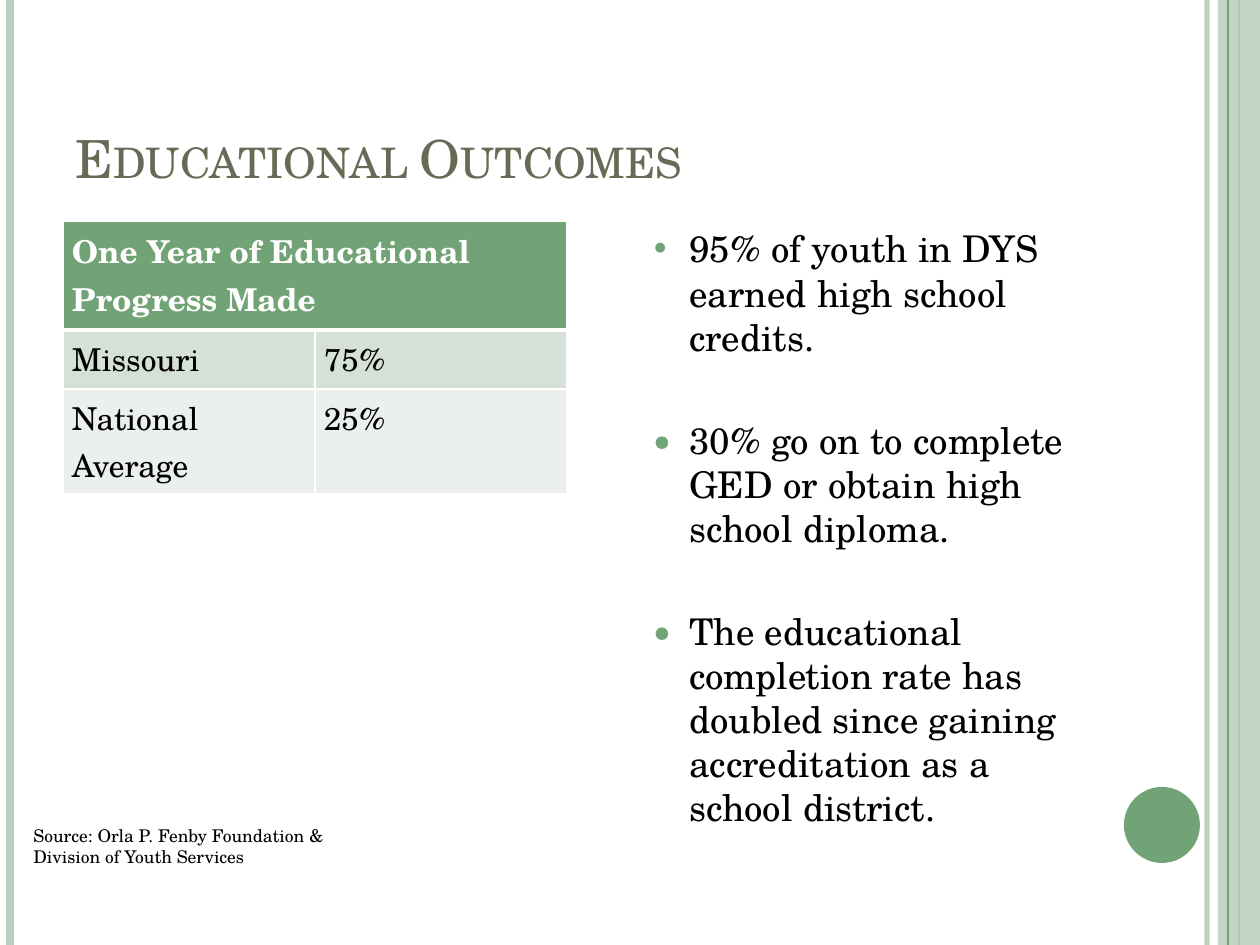
from dataclasses import dataclass

from lxml import etree
from pptx import Presentation
from pptx import util as u
from pptx.dml import color as c
from pptx.enum import shapes, text
from pptx.oxml import ns

PX = 914400 / 126
FONT = "TeX Gyre Schola"
GREEN, PALE, OLIVE = "72A376", "BCCEBD", "676A55"
WHITE, BLACK = "FFFFFF", "000000"


@dataclass
class Rule:
    x: int
    color: str
    width: float
    opacity: int = 100


@dataclass
class Panel:
    kind: int
    box: tuple
    color: str
    opacity: int = 100


@dataclass
class Cell:
    row: int
    column: int
    words: str
    fill: str
    color: str = BLACK
    bold: bool = False


def px(value: int) -> u.Emu:
    return u.Emu(round(value * PX))


def rgb(value: str) -> c.RGBColor:
    return c.RGBColor.from_string(value)


def add_xml(parent, tag: str, **values):
    child = etree.SubElement(parent, ns.qn(tag))
    for name, value in values.items():
        child.set(name, str(value))
    return child


def set_opacity(fill, opacity: int) -> None:
    if opacity < 100:
        add_xml(fill.find(ns.qn("a:srgbClr")), "a:alpha", val=opacity * 1000)


def draw_rule(page, rule: Rule) -> None:
    line = page.shapes.add_connector(
        shapes.MSO_CONNECTOR.STRAIGHT, px(rule.x), 0, px(rule.x), px(945))
    line.line.color.rgb = rgb(rule.color)
    line.line.width = u.Pt(rule.width)
    properties = line._element.spPr
    set_opacity(properties.find(ns.qn("a:ln")).find(ns.qn("a:solidFill")),
                rule.opacity)
    add_xml(properties, "a:effectLst")


def draw_panel(page, panel: Panel) -> None:
    shape = page.shapes.add_shape(panel.kind, *map(px, panel.box))
    shape.shadow.inherit = False
    shape.fill.solid()
    shape.fill.fore_color.rgb = rgb(panel.color)
    shape.line.fill.background()
    set_opacity(shape._element.spPr.find(ns.qn("a:solidFill")), panel.opacity)


def write(para, words: str, size: int, color: str = BLACK, bold: bool = False,
          pitch: float = 0):
    span = para.add_run()
    span.text = words
    style = {"name": FONT, "size": u.Pt(size), "bold": bold}
    for name, value in style.items():
        setattr(span.font, name, value)
    span.font.color.rgb = rgb(color)
    if pitch:
        para.line_spacing = u.Pt(pitch)
    return span


def add_frame(page, box: tuple, anchor=text.MSO_ANCHOR.TOP):
    frame = page.shapes.add_textbox(*map(px, box)).text_frame
    frame.word_wrap = True
    frame.vertical_anchor = anchor
    return frame


def set_bullet(para, mark: str) -> None:
    properties = para._p.get_or_add_pPr()
    properties.set("marL", str(px(88)))
    properties.set("indent", str(-px(38)))
    add_xml(add_xml(properties, "a:buClr"), "a:srgbClr", val=GREEN)
    add_xml(properties, "a:buSzPct", val=80000)
    add_xml(properties, "a:buFont", typeface=FONT)
    add_xml(properties, "a:buChar", char=mark)


def set_borders(cell, bottom: float = 1) -> None:
    properties = cell._tc.get_or_add_tcPr()
    widths = {"a:lnL": 1, "a:lnR": 1, "a:lnT": 1, "a:lnB": bottom}
    for place, (tag, width) in enumerate(widths.items()):
        line = add_xml(properties, tag, w=u.Pt(width))
        add_xml(add_xml(line, "a:solidFill"), "a:srgbClr", val=WHITE)
        properties.insert(place, line)


def draw_table(page, cells: list) -> None:
    heights = (109, 59, 105)
    table = page.shapes.add_table(
        3, 2, px(63), px(221), px(504), px(sum(heights))).table
    for row, height in zip(table.rows, heights):
        row.height = px(height)
    table.cell(0, 0).merge(table.cell(0, 1))
    margins = {"margin_left": 9, "margin_right": 9,
               "margin_top": 6, "margin_bottom": 6}
    for item in cells:
        cell = table.cell(item.row, item.column)
        for name, value in margins.items():
            setattr(cell, name, px(value))
        cell.fill.solid()
        cell.fill.fore_color.rgb = rgb(item.fill)
        set_borders(cell, bottom=1 if item.row else 3)
        write(cell.text_frame.paragraphs[0], item.words, 18, item.color,
              item.bold, pitch=27.6 if item.bold else 26.5)


def main() -> None:
    deck = Presentation()
    deck.slide_width, deck.slide_height = px(1260), px(945)
    page = deck.slides.add_slide(deck.slide_layouts[6])

    # Side bands and page circle
    for item in (
        Rule(1207, PALE, 3, 93),
        Rule(10, PALE, 4.5),
        Rule(1239, GREEN, 1.5),
        Panel(shapes.MSO_SHAPE.RECTANGLE, (1218, 0, 42, 945), PALE, 87),
        Rule(1228, GREEN, 0.75),
        Panel(shapes.MSO_SHAPE.OVAL, (1124, 787, 76, 76), GREEN),
    ):
        draw = draw_rule if isinstance(item, Rule) else draw_panel
        draw(page, item)

    # Title
    title = add_frame(page, (63, 38, 1029, 157), text.MSO_ANCHOR.BOTTOM)
    span = write(title.paragraphs[0], "Educational Outcomes", 30, OLIVE)
    span._r.get_or_add_rPr().set("cap", "small")

    # Progress table
    draw_table(page, [
        Cell(0, 0, "One Year of Educational Progress Made", GREEN, WHITE, True),
        Cell(1, 0, "Missouri", "D5E0D6"),
        Cell(1, 1, "75%", "D5E0D6"),
        Cell(2, 0, "National Average", "EBF0EC"),
        Cell(2, 1, "25%", "EBF0EC"),
    ])

    # Outcome bullets
    body = add_frame(page, (589, 220, 504, 630))
    outcomes = (
        ("•", "95% of youth in DYS earned high school credits."),
        ("●", "30% go on to complete GED or obtain high school diploma."),
        ("●", "The educational completion rate has doubled since gaining "
              "accreditation as a school district."),
    )
    for number, (mark, words) in enumerate(outcomes):
        para = body.add_paragraph() if number else body.paragraphs[0]
        write(para, words, 21, pitch=25.2)
        para.space_before = u.Pt(33.7 if number else 0)
        set_bullet(para, mark)

    # Source note
    note = add_frame(page, (21, 819, 347, 55))
    write(note.paragraphs[0], "Source: Orla P. Fenby Foundation & "
          "Division of Youth Services", 10, pitch=12)

    deck.save("out.pptx")


if __name__ == "__main__":
    main()
